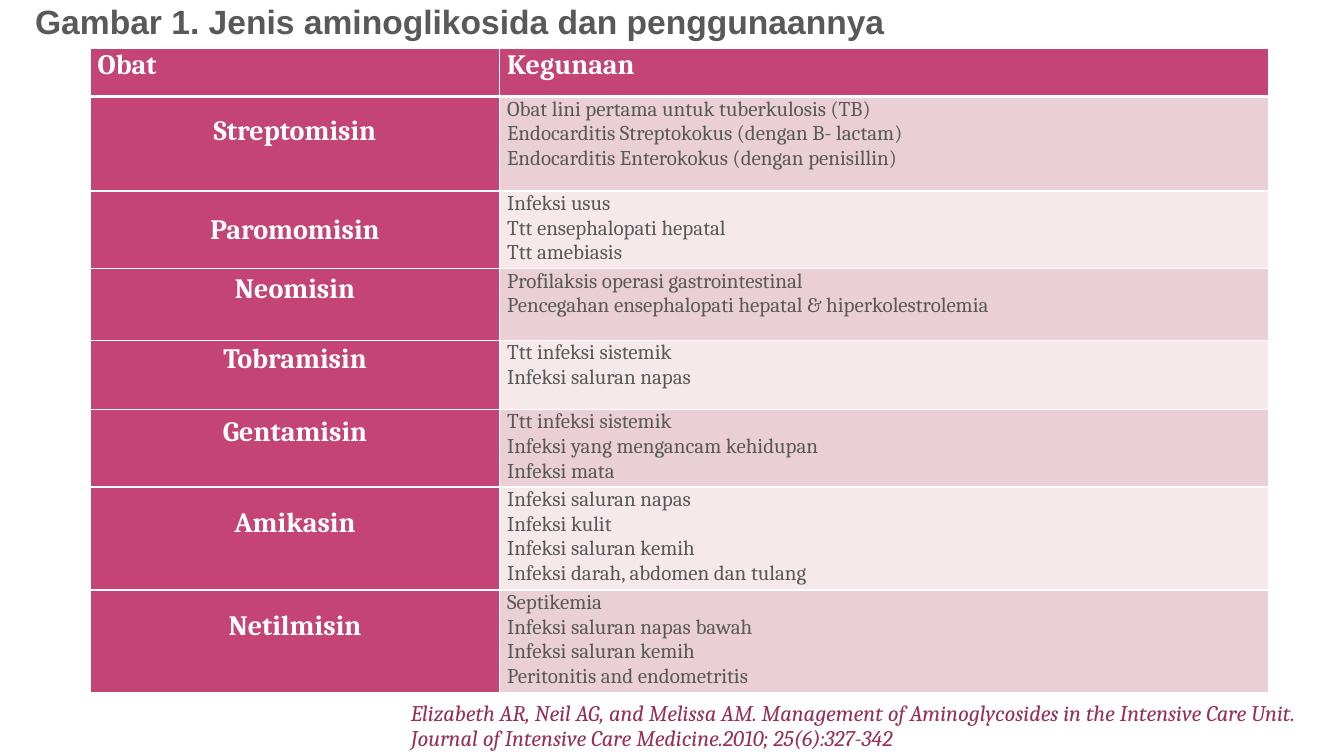
from lxml.etree import SubElement
from pptx import Presentation
from pptx.dml.color import RGBColor
from pptx.enum.text import MSO_ANCHOR, PP_ALIGN
from pptx.oxml.ns import qn
from pptx.util import Emu, Pt

PINK = RGBColor(0xC4, 0x44, 0x75)
ROSE = RGBColor(0xEA, 0xCF, 0xD6)
PALE = RGBColor(0xF5, 0xE9, 0xEC)
WHITE = RGBColor(0xFF, 0xFF, 0xFF)
GRAY = RGBColor(0x59, 0x59, 0x59)
WINE = RGBColor(0x97, 0x2F, 0x57)

HEADER = ("Obat", "Kegunaan")
HEADER_HEIGHT = 46
COLUMN_WIDTHS = (390, 732)
DRUGS = [
    ("Streptomisin", 90, 24, [
        "Obat lini pertama untuk tuberkulosis (TB)",
        "Endocarditis Streptokokus (dengan B- lactam)",
        "Endocarditis Enterokokus (dengan penisillin)"]),
    ("Paromomisin", 74, 0, [
        "Infeksi usus", "Ttt ensephalopati hepatal", "Ttt amebiasis"]),
    ("Neomisin", 68, 30, [
        "Profilaksis operasi gastrointestinal",
        "Pencegahan ensephalopati hepatal & hiperkolestrolemia"]),
    ("Tobramisin", 66, 30, ["Ttt infeksi sistemik", "Infeksi saluran napas"]),
    ("Gentamisin", 74, 30, [
        "Ttt infeksi sistemik", "Infeksi yang mengancam kehidupan", "Infeksi mata"]),
    ("Amikasin", 98, 30, [
        "Infeksi saluran napas", "Infeksi kulit", "Infeksi saluran kemih",
        "Infeksi darah, abdomen dan tulang"]),
    ("Netilmisin", 98, 30, [
        "Septikemia", "Infeksi saluran napas bawah", "Infeksi saluran kemih",
        "Peritonitis and endometritis"]),
]
CITATION = (
    "Elizabeth AR, Neil AG, and Melissa AM. Management of Aminoglycosides in the Intensive Care Unit.",
    "Journal of Intensive Care Medicine.2010; 25(6):327-342",
)


def px(length):
    return Emu(length * 9525)


def set_font(paragraph, name, size, color, bold=False, italic=False):
    font = paragraph.font
    font.name = name
    font.size = Pt(size)
    font.color.rgb = color
    font.bold = bold
    font.italic = italic


def add_text(slide, box, lines, anchor, **font):
    shape = slide.shapes.add_textbox(*map(px, box))
    frame = shape.text_frame
    frame.word_wrap = True
    frame.vertical_anchor = anchor
    paragraph = frame.paragraphs[0]
    paragraph.line_spacing = 0.9
    for index, line in enumerate(lines):
        if index:
            paragraph.add_line_break()
        paragraph.add_run().text = line
    set_font(paragraph, **font)


def add_borders(cell, top, bottom):
    properties = cell._tc.get_or_add_tcPr()
    for side, width in (("L", 1), ("R", 1), ("T", top), ("B", bottom)):
        line = SubElement(properties, qn(f"a:ln{side}"), w=str(Pt(width)))
        fill = SubElement(line, qn("a:solidFill"))
        SubElement(fill, qn("a:srgbClr"), val=str(WHITE))


def fill_cell(cell, lines, color, size, text_color, bold,
              alignment=PP_ALIGN.LEFT, anchor=MSO_ANCHOR.TOP,
              space_below=0, top=1, bottom=1):
    add_borders(cell, top, bottom)
    cell.fill.solid()
    cell.fill.fore_color.rgb = color
    cell.margin_left = cell.margin_right = px(7)
    cell.margin_top = 0
    cell.margin_bottom = px(space_below)
    cell.vertical_anchor = anchor
    cell.text_frame.text = "\n".join(lines)
    for paragraph in cell.text_frame.paragraphs:
        paragraph.alignment = alignment
        paragraph.line_spacing = 1.02
        set_font(paragraph, "Cambria", size, text_color, bold)
        SubElement(paragraph._p, qn("a:endParaRPr"), sz=str(size * 100))


def add_drug_table(slide, left, top):
    heights = [HEADER_HEIGHT] + [height for _, height, _, _ in DRUGS]
    frame = slide.shapes.add_table(
        len(heights), len(COLUMN_WIDTHS), px(left), px(top),
        px(sum(COLUMN_WIDTHS)), px(sum(heights)))
    table = frame.table
    for column, width in zip(table.columns, COLUMN_WIDTHS):
        column.width = px(width)
    for row, height in zip(table.rows, heights):
        row.height = px(height)
    for index, heading in enumerate(HEADER):
        fill_cell(table.cell(0, index), [heading], PINK, 20, WHITE, True, bottom=3)
    for index, (name, _, space_below, uses) in enumerate(DRUGS, start=1):
        top_border = 3 if index == 1 else 1
        fill_cell(table.cell(index, 0), [name], PINK, 20, WHITE, True,
                  PP_ALIGN.CENTER, MSO_ANCHOR.MIDDLE, space_below, top_border)
        fill_cell(table.cell(index, 1), uses, ROSE if index % 2 else PALE,
                  15, GRAY, False, top=top_border)


def build_slide(presentation):
    slide = presentation.slides.add_slide(presentation.slide_layouts[6])
    add_text(slide, (24, 0, 912, 46),
             ["Gambar 1. Jenis aminoglikosida dan penggunaannya"],
             MSO_ANCHOR.TOP, name="Arial", size=24, color=GRAY, bold=True)
    add_drug_table(slide, 86, 46)
    add_text(slide, (382, 658, 898, 62), CITATION, MSO_ANCHOR.BOTTOM,
             name="Cambria", size=16, color=WINE, italic=True)


def main():
    presentation = Presentation()
    presentation.slide_width = px(1280)
    presentation.slide_height = px(720)
    build_slide(presentation)
    presentation.save("out.pptx")


if __name__ == "__main__":
    main()
